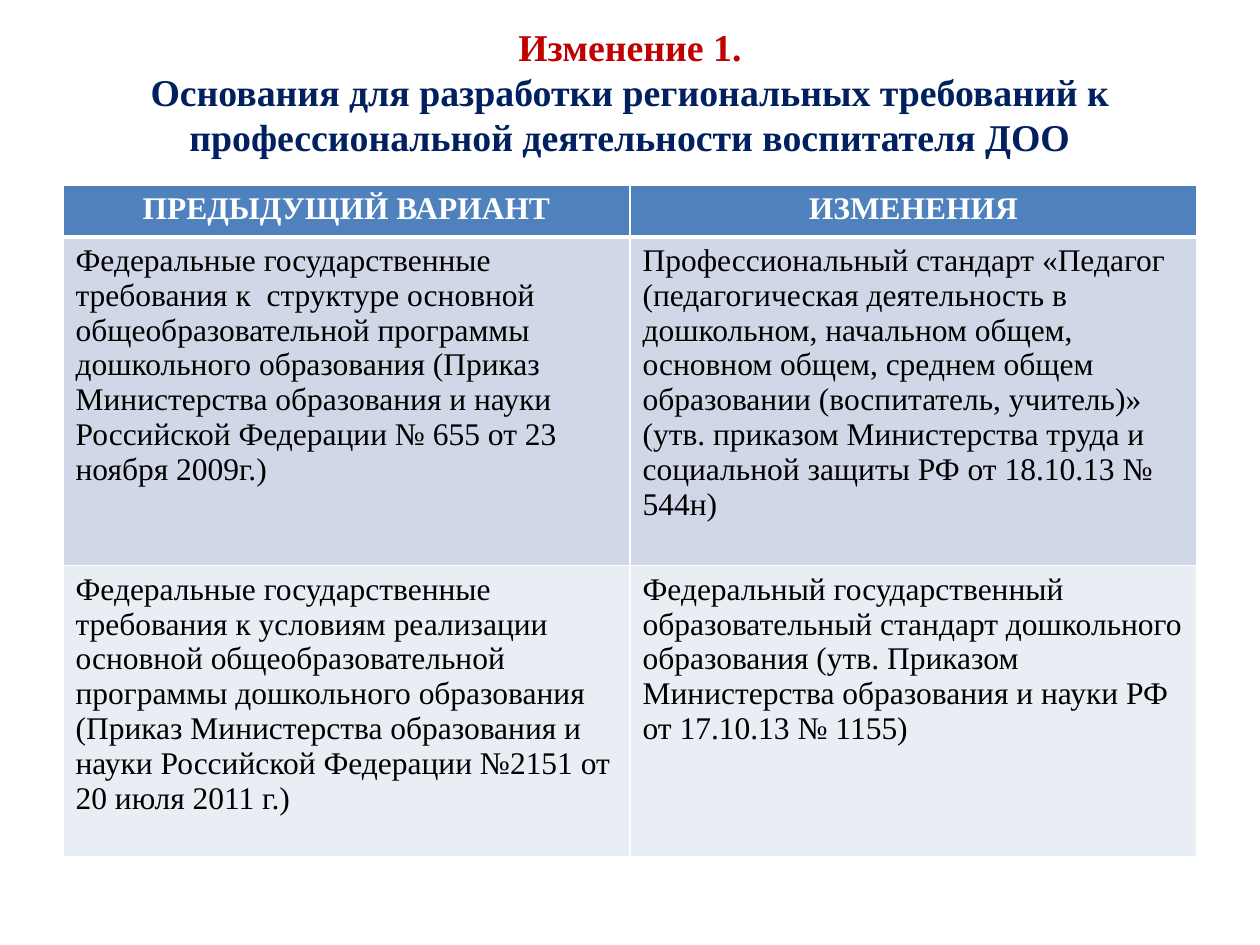
from lxml.etree import SubElement
from pptx import Presentation
from pptx.dml.color import RGBColor
from pptx.enum.text import MSO_ANCHOR, PP_ALIGN
from pptx.oxml.ns import qn
from pptx.util import Inches, Pt

FONT = "Times New Roman"
TITLE = [
    ("Изменение 1.", "C00000"),
    ("Основания для разработки региональных требований к "
     "профессиональной деятельности воспитателя ДОО", "002060"),
]
ROWS = [
    ("ПРЕДЫДУЩИЙ ВАРИАНТ", "ИЗМЕНЕНИЯ"),
    ("Федеральные государственные требования к  структуре основной "
     "общеобразовательной программы дошкольного образования (Приказ "
     "Министерства образования и науки Российской Федерации № 655 от 23 "
     "ноября 2009г.)",
     "Профессиональный стандарт «Педагог (педагогическая деятельность в "
     "дошкольном, начальном общем, основном общем, среднем общем "
     "образовании (воспитатель, учитель)» (утв. приказом Министерства труда "
     "и социальной защиты РФ от 18.10.13 № 544н)"),
    ("Федеральные государственные требования к условиям реализации "
     "основной общеобразовательной программы дошкольного образования "
     "(Приказ Министерства образования и науки Российской Федерации №2151 "
     "от 20 июля 2011 г.)",
     "Федеральный государственный образовательный стандарт дошкольного "
     "образования (утв. Приказом Министерства образования и науки РФ от "
     "17.10.13 № 1155)"),
]
ROW_HEIGHTS = [0.41, 2.61, 2.31]
ROW_FILLS = ["4F81BD", "D0D8E8", "E9EDF4"]


def color(value):
    return RGBColor.from_string(value)


def add_text(p, text, size=18, fill="000000", bold=False, align=PP_ALIGN.LEFT):
    p.alignment = align
    r = p.add_run()
    r.text = text
    r.font.name = FONT
    r.font.size = Pt(size)
    r.font.bold = bold
    r.font.color.rgb = color(fill)


def set_borders(cell, bottom):
    tcPr = cell._tc.get_or_add_tcPr()
    widths = {"a:lnL": 1, "a:lnR": 1, "a:lnT": 1, "a:lnB": bottom}
    for i, (tag, width) in enumerate(widths.items()):
        ln = tcPr.makeelement(qn(tag), {"w": str(Pt(width))})
        fill = SubElement(ln, qn("a:solidFill"))
        SubElement(fill, qn("a:srgbClr"), val="FFFFFF")
        tcPr.insert(i, ln)


def add_title(s):
    sp = s.shapes.title
    sp.left, sp.top = Inches(0.5), Inches(0.3)
    sp.width, sp.height = Inches(9), Inches(0.85)
    tf = sp.text_frame
    tf.word_wrap = True
    tf.vertical_anchor = MSO_ANCHOR.MIDDLE
    p = tf.paragraphs[0]
    for i, (text, fill) in enumerate(TITLE):
        if i:
            p.add_line_break()
        add_text(p, text, size=21.6, fill=fill, bold=True, align=PP_ALIGN.CENTER)


def add_comparison(s):
    table = s.shapes.add_table(
        len(ROWS), len(ROWS[0]), Inches(0.5), Inches(1.47),
        Inches(9), Inches(sum(ROW_HEIGHTS))).table
    for i, texts in enumerate(ROWS):
        table.rows[i].height = Inches(ROW_HEIGHTS[i])
        header = i == 0
        for j, text in enumerate(texts):
            cell = table.cell(i, j)
            cell.fill.solid()
            cell.fill.fore_color.rgb = color(ROW_FILLS[i])
            set_borders(cell, bottom=3 if header else 1)
            add_text(cell.text_frame.paragraphs[0], text, bold=header,
                     fill="FFFFFF" if header else "000000",
                     align=PP_ALIGN.CENTER if header else PP_ALIGN.LEFT)


def main():
    prs = Presentation()
    prs.slide_width, prs.slide_height = Inches(10), Inches(7.5)
    s = prs.slides.add_slide(prs.slide_layouts[5])
    add_title(s)
    add_comparison(s)
    prs.save("out.pptx")


if __name__ == "__main__":
    main()
